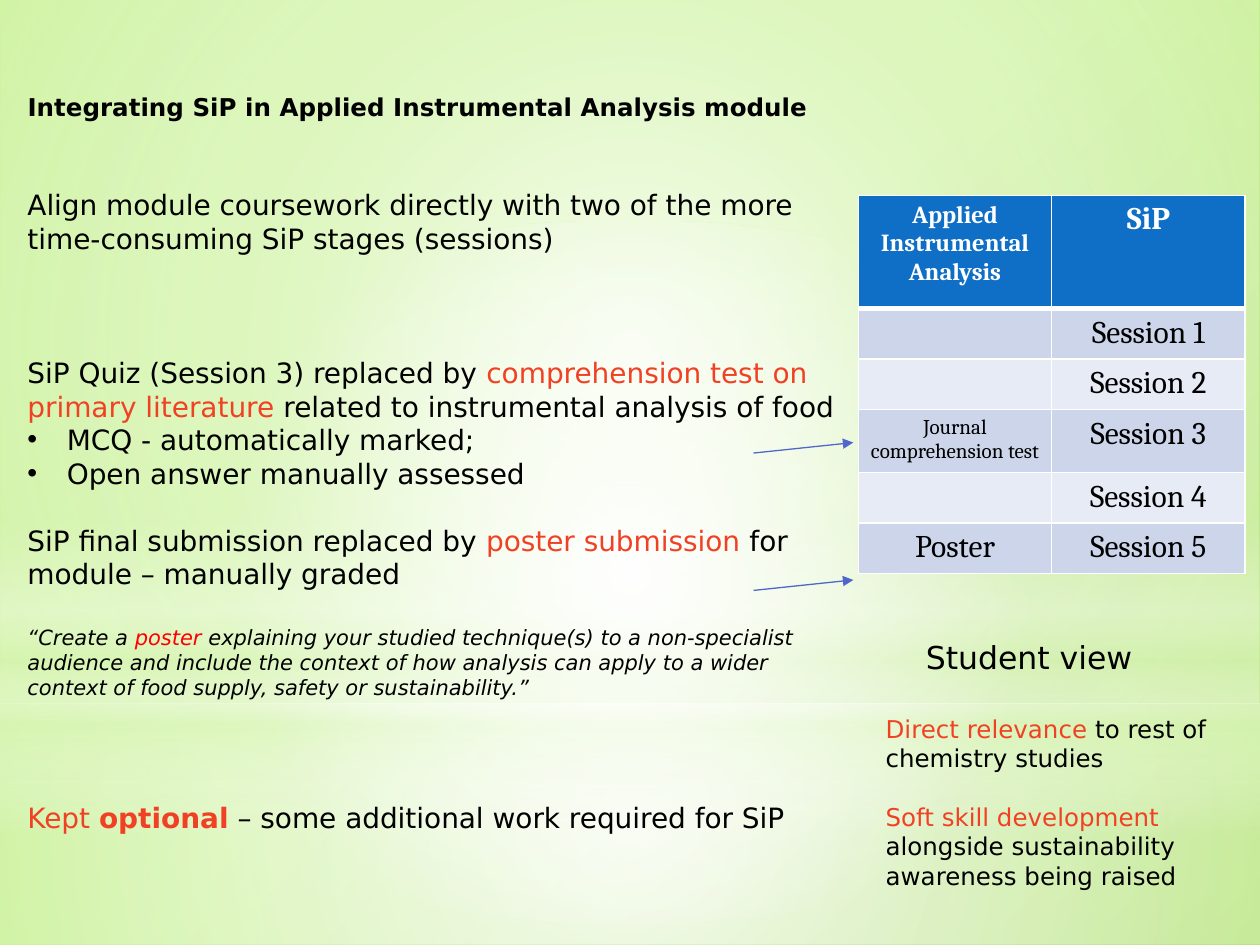
from lxml import etree
from pptx import Presentation
from pptx.dml.color import RGBColor
from pptx.enum.shapes import MSO_CONNECTOR, MSO_SHAPE
from pptx.enum.text import MSO_ANCHOR, PP_ALIGN
from pptx.oxml.ns import qn
from pptx.util import Pt

RECT, OVAL = MSO_SHAPE.RECTANGLE, MSO_SHAPE.OVAL
LINE = MSO_CONNECTOR.STRAIGHT
TOP, LEFT, MID = MSO_ANCHOR.TOP, PP_ALIGN.LEFT, PP_ALIGN.CENTER
SANS, SERIF = "DejaVu Sans", "Cambria"
BLACK, WHITE, ACCENT, RED, BLUE = "000000", "FFFFFF", "F14124", "FF0000", "4E67C8"
HEAD, BANDS = "0F6FC6", ("CCD5EA", "E7EBF5")
PALE = "DBF6B9"
LEAD = 1.2


def rgb(code):
    """Turn a hex string into a colour."""
    return RGBColor.from_string(code)


def node(parent, tag, **attrs):
    """Append a drawing element with its attributes."""
    return etree.SubElement(parent, qn(tag), {k: str(v) for k, v in attrs.items()})


def shade(fill, owner, stops, focus=None):
    """Give a fill gradient stops, radial around focus or running downwards."""
    fill.gradient()
    grad = owner.find(".//" + qn("a:gradFill"))
    for child in list(grad):
        grad.remove(child)
    group = node(grad, "a:gsLst")
    for pos, code, alpha in stops:
        color = node(node(group, "a:gs", pos=pos * 1000), "a:srgbClr", val=code)
        if alpha < 100:
            node(color, "a:alpha", val=alpha * 1000)
    if focus:
        path = node(grad, "a:path", path="circle")
        node(path, "a:fillToRect", **{k: v * 1000 for k, v in zip("ltrb", focus)})
    else:
        node(grad, "a:lin", ang=5400000, scaled=0)


def write(para, text, size=16, font=SANS, color=BLACK, bold=False, italic=False,
          align=LEFT, gap=0, lead=LEAD):
    """Write text, or (text, changes) parts, into a paragraph."""
    para.alignment = align
    para.space_before = Pt(gap)
    if lead:
        para.line_spacing = Pt(round(size * lead, 2))
    for part in [(text, {})] if isinstance(text, str) else text:
        words, own = (part, {}) if isinstance(part, str) else part
        run = para.add_run()
        run.text = words
        face = run.font
        face.size, face.name, face.italic = Pt(size), font, italic
        face.bold = own.get("bold", bold)
        face.color.rgb = rgb(own.get("color", color))


def indent(para, left, bullet=False):
    """Indent a paragraph, with a hanging bullet on request."""
    props = para._p.get_or_add_pPr()
    props.set("marL", str(Pt(left)))
    if bullet:
        props.set("indent", str(-Pt(left)))
        node(props, "a:buFont", typeface="Arial")
        node(props, "a:buChar", char="•")


def backdrop(slide, x, y, w, h):
    """Lay the green gradient and its soft light layers."""
    shade(slide.background.fill, slide.element,
          [(0, "AAEA5A", 100), (48, "AAEA5A", 100), (100, "75BF19", 100)],
          (0, 0, 100, 100))
    center = (50, 50, 50, 50)
    split = 401.8
    layers = [
        (RECT, split, h - split,
         [(0, WHITE, 91), (37, WHITE, 76), (100, PALE, 79)], center),
        (RECT, 0, split,
         [(0, WHITE, 89), (48, WHITE, 62), (100, PALE, 79)], center),
        (RECT, 296.6, 180,
         [(0, WHITE, 0), (29, WHITE, 30), (45, PALE, 40), (55, WHITE, 26),
          (65, PALE, 60), (100, WHITE, 0)], None),
        (OVAL, 126, split, [(0, WHITE, 100), (56, WHITE, 0)], center),
    ]
    for kind, top, tall, stops, focus in layers:
        layer = slide.shapes.add_shape(kind, Pt(x), Pt(y + top), Pt(w), Pt(tall))
        layer.shadow.inherit = False
        layer.line.fill.background()
        shade(layer.fill, layer.element, stops, focus)


def heading(slide, x, y, w, h):
    """Place the slide title."""
    title = slide.shapes.title
    title.element.getparent().append(title.element)
    title.left, title.top, title.width, title.height = Pt(x), Pt(y), Pt(w), Pt(h)
    title.text_frame.vertical_anchor = TOP
    title.text_frame.word_wrap = True
    write(title.text_frame.paragraphs[0],
          "Integrating SiP in Applied Instrumental Analysis module",
          size=14, bold=True)


def prose(slide, x, y, w, h, items):
    """Fill a text box with (text, format, indent, bullet) items."""
    frame = slide.shapes.add_textbox(Pt(x), Pt(y), Pt(w), Pt(h)).text_frame
    frame.word_wrap = True
    for i, (text, form, left, bullet) in enumerate(items):
        para = frame.add_paragraph() if i else frame.paragraphs[0]
        write(para, text, **form)
        if left:
            indent(para, left, bullet)


def plan(slide, x, y, w, h):
    """Describe how the coursework replaces the sessions."""
    hot = {"color": ACCENT}
    prose(slide, x, y, w, h, [
        ("Align module coursework directly with two of the more "
         "time-consuming SiP stages (sessions)", {}, 0, False),
        (["SiP Quiz (Session 3) replaced by ",
          ("comprehension test on primary literature ", hot),
          "related to instrumental analysis of food"], {"gap": 57.6}, 0, False),
        ("MCQ - automatically marked;", {}, 22.5, True),
        ("Open answer manually assessed", {}, 22.5, True),
        (["SiP final submission replaced by ", ("poster submission ", hot),
          "for module – manually graded"], {"gap": 19.2}, 0, False),
        (["“Create a ", ("poster", {"color": RED}),
          " explaining your studied technique(s) to a non-specialist audience "
          "and include the context of how analysis can apply to a wider context "
          "of food supply, safety or sustainability.”"],
         {"size": 12, "italic": True, "gap": 19.2}, 0, False),
        ([("Kept ", hot), ("optional", {"color": ACCENT, "bold": True}),
          " – some additional work required for SiP"], {"gap": 57.6}, 0, False),
    ])


def views(slide, x, y, w, h):
    """List what students gain."""
    hot = {"color": ACCENT}
    prose(slide, x, y, w, h, [
        ("Student view", {"size": 18}, 23, False),
        ([("Direct relevance ", hot), "to rest of chemistry studies"],
         {"size": 14, "gap": 21.6}, 0, False),
        ([("Soft skill development ", hot),
          "alongside sustainability awareness being raised"],
         {"size": 14, "gap": 16.8}, 0, False),
    ])


def border(cell, widths):
    """Draw white cell borders: left, right, top, bottom."""
    props = cell._tc.get_or_add_tcPr()
    for i, (side, width) in enumerate(zip("LRTB", widths)):
        edge = etree.Element(qn("a:ln" + side), w=str(Pt(width)))
        node(node(edge, "a:solidFill"), "a:srgbClr", val=WHITE)
        props.insert(i, edge)


def grid(slide, x, y, w, h):
    """Map module tasks to sessions in a table."""
    tasks = {3: ("Journal comprehension test", 12), 5: ("Poster", 18)}
    rows = [[("Applied Instrumental Analysis", 14), ("SiP", 18)]]
    rows += [[tasks.get(n, ("", 18)), (f"Session {n}", 18)] for n in range(1, 6)]
    table = slide.shapes.add_table(len(rows), 2, Pt(x), Pt(y), Pt(w), Pt(h)).table
    for col in table.columns:
        col.width = Pt(w / 2)
    for r, row in enumerate(rows):
        table.rows[r].height = Pt(28.8 if r else h - 5 * 28.8)
        for c, (text, size) in enumerate(row):
            cell = table.cell(r, c)
            cell.margin_left = cell.margin_right = Pt(5)
            cell.fill.solid()
            cell.fill.fore_color.rgb = rgb(BANDS[(r - 1) % 2] if r else HEAD)
            border(cell, (1, 1, 3 if r == 1 else 1, 1 if r else 3))
            if text:
                write(cell.text_frame.paragraphs[0], text, size=size, font=SERIF,
                      color=BLACK if r else WHITE, bold=not r, align=MID, lead=None)


def arrow(slide, x, y, w, h):
    """Draw an arrow rising from lower left to upper right."""
    line = slide.shapes.add_connector(LINE, Pt(x), Pt(y + h), Pt(x + w), Pt(y))
    line.line.color.rgb = rgb(BLUE)
    line.line.width = Pt(0.75)
    node(line.line._get_or_add_ln(), "a:tailEnd", type="triangle")
    node(line.element.spPr, "a:effectLst")


def main():
    """Build and save the slide."""
    deck = Presentation()
    deck.slide_width, deck.slide_height = Pt(720), Pt(540)
    slide = deck.slides.add_slide(deck.slide_layouts[5])
    backdrop(slide, 0, 0, 720, 540)
    heading(slide, 8.6, 49, 481.7, 24)
    plan(slide, 8.6, 103.6, 481.7, 403)
    grid(slide, 490.5, 111.6, 221, 208.8)
    views(slide, 499, 361, 221, 152.6)
    for top in (252.9, 331.4):
        arrow(slide, 430.6, top, 57, 6)
    deck.save("out.pptx")


if __name__ == "__main__":
    main()
